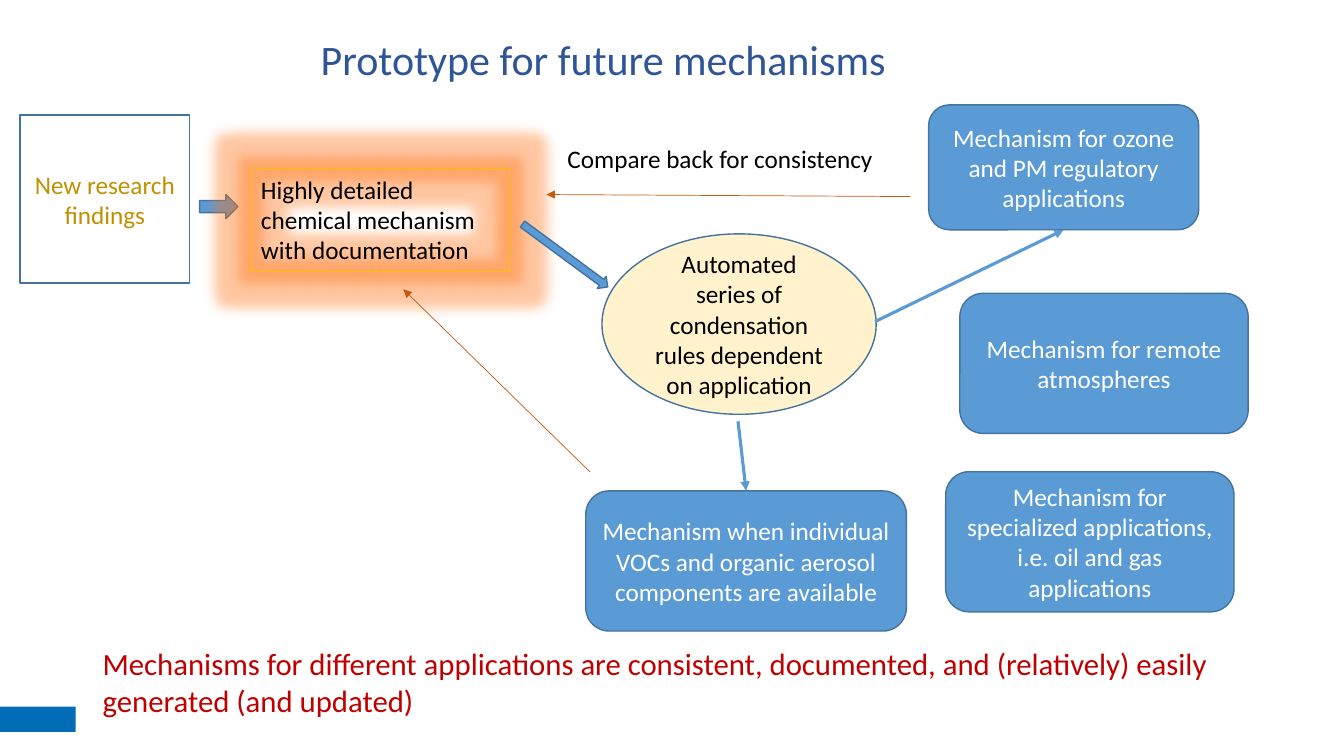
from dataclasses import dataclass

from lxml import etree
from pptx import Presentation
from pptx import util as u
from pptx.dml.color import RGBColor
from pptx.enum import shapes, text
from pptx.oxml import ns

PX = u.Inches(1) // 100


@dataclass(frozen=True)
class Theme:
    """Colours, font and type sizes of the slide."""
    font: str = "Calibri"
    title_size: int = 30
    body_size: int = 18
    summary_size: int = 22
    title: str = "2F5597"
    text: str = "000000"
    blue: str = "5B9BD5"
    outline: str = "43739E"
    white: str = "FFFFFF"
    cream: str = "FFF2CC"
    gold: str = "FFC000"
    dark_gold: str = "BF9000"
    glow: str = "FF7518"
    feedback: str = "C55A11"
    summary: str = "C00000"
    bar: str = "026CB6"


THEME = Theme()
SHAPE = shapes.MSO_SHAPE
CENTER = text.PP_ALIGN.CENTER
LEFT = text.PP_ALIGN.LEFT
MIDDLE = text.MSO_ANCHOR.MIDDLE
TOP = text.MSO_ANCHOR.TOP


def place(box, left, top, width, height):
    """Turn a rectangle relative to a region's box into EMU."""
    return [u.Emu(value * PX) for value in (box[0] + left, box[1] + top, width, height)]


def write(shape, words, color, size=THEME.body_size, align=CENTER, anchor=MIDDLE, wrap=True):
    """Write one run of text into a shape."""
    frame = shape.text_frame
    frame.word_wrap = wrap
    frame.vertical_anchor = anchor
    paragraph = frame.paragraphs[0]
    paragraph.alignment = align
    run = paragraph.add_run()
    run.text = words
    run.font.name = THEME.font
    run.font.size = u.Pt(size)
    run.font.color.rgb = RGBColor.from_string(color)


def add_block(slide, kind, rectangle, fill=THEME.blue, line=THEME.outline, line_width=1):
    """Add a preset shape with a flat fill and outline."""
    shape = slide.shapes.add_shape(kind, *rectangle)
    shape.shadow.inherit = False
    if fill:
        shape.fill.solid()
        shape.fill.fore_color.rgb = RGBColor.from_string(fill)
    else:
        shape.fill.background()
    if line:
        shape.line.color.rgb = RGBColor.from_string(line)
        shape.line.width = u.Pt(line_width)
    else:
        shape.line.fill.background()
    return shape


def add_glow(shape, color, radius, alpha):
    """Surround a shape with a translucent glow."""
    effects = shape._element.spPr.find(ns.qn("a:effectLst"))
    glow = etree.SubElement(effects, ns.qn("a:glow"), rad=str(u.Pt(radius)))
    tint = etree.SubElement(glow, ns.qn("a:srgbClr"), val=color)
    etree.SubElement(tint, ns.qn("a:alpha"), val=str(alpha * 1000))


def add_arrow(slide, box, start, end, color, width):
    """Add a straight line with an arrowhead at its end."""
    points = [u.Emu((box[i % 2] + value) * PX) for i, value in enumerate(start + end)]
    arrow = slide.shapes.add_connector(shapes.MSO_CONNECTOR.STRAIGHT, *points)
    arrow.line.color.rgb = RGBColor.from_string(color)
    arrow.line.width = u.Pt(width)
    etree.SubElement(arrow.line._get_or_add_ln(), ns.qn("a:tailEnd"), type="triangle")
    etree.SubElement(arrow._element.spPr, ns.qn("a:effectLst"))
    return arrow


def add_title(slide, box):
    """Place and fill the title placeholder."""
    title = slide.shapes.title
    title.left, title.top, title.width, title.height = place(box, 0, 0, *box[2:])
    write(title, "Prototype for future mechanisms", THEME.title, THEME.title_size, LEFT)
    title.text_frame.paragraphs[0].line_spacing = 0.9


def add_sources(slide, box):
    """Draw the research findings feeding the detailed mechanism."""
    findings = add_block(slide, SHAPE.RECTANGLE, place(box, 0, 0, 168, 167), None)
    write(findings, "New research findings", THEME.dark_gold)
    add_block(slide, SHAPE.RIGHT_ARROW, place(box, 178, 79, 38, 24))
    detailed = add_block(slide, SHAPE.RECTANGLE, place(box, 229, 54, 256, 101),
                         None, THEME.gold, 0.75)
    add_glow(detailed, THEME.glow, 18, 40)
    write(detailed, "Highly detailed chemical mechanism with documentation",
          THEME.text, align=LEFT, anchor=TOP)


def add_condensation(slide, box):
    """Draw the condensation rules and the block arrow leading to them."""
    rules = add_block(slide, SHAPE.OVAL, place(box, 89, 0, 272, 179), THEME.cream)
    write(rules, "Automated series of condensation rules dependent on application", THEME.text)
    arrow = add_block(slide, SHAPE.RIGHT_ARROW, place(box, 0, 14, 105, 15))
    arrow.rotation = 36.4


def add_applications(slide, box):
    """Draw the application mechanisms with their incoming arrows."""
    applications = [
        ("Mechanism for ozone and PM regulatory applications", 340, 0, 268, 124),
        ("Mechanism for remote atmospheres", 371, 187, 286, 139),
        ("Mechanism for specialized applications, i.e. oil and gas applications",
         357, 364, 286, 139),
        ("Mechanism when individual VOCs and organic aerosol components are available",
         0, 383, 318, 139),
    ]
    blocks = []
    for words, *rectangle in applications:
        block = add_block(slide, SHAPE.ROUNDED_RECTANGLE, place(box, *rectangle))
        write(block, words, THEME.white)
        blocks.append(block)
    to_ozone = add_arrow(slide, box, (287, 215), (474, 124), THEME.blue, 2.25)
    to_ozone.end_connect(blocks[0], 2)
    to_individual = add_arrow(slide, box, (151, 314), (159, 383), THEME.blue, 2.25)
    to_individual.end_connect(blocks[3], 0)


def add_feedback(slide, box):
    """Draw the thin arrows back to the detailed mechanism and their label."""
    label = slide.shapes.add_textbox(*place(box, 153, 0, 332, 40))
    write(label, "Compare back for consistency", THEME.text, align=LEFT, anchor=TOP, wrap=False)
    for start, end in [((503, 58), (142, 56)), ((185, 331), (0, 150))]:
        add_arrow(slide, box, start, end, THEME.feedback, 0.5)


def add_summary(slide, box):
    """Write the closing statement."""
    summary = slide.shapes.add_textbox(*place(box, 0, 0, *box[2:]))
    write(summary, "Mechanisms for different applications are consistent, documented, and "
          "(relatively) easily generated (and updated)",
          THEME.summary, THEME.summary_size, LEFT, TOP)


def main():
    """Build and save the presentation."""
    presentation = Presentation()
    presentation.slide_width = u.Emu(1333 * PX)
    presentation.slide_height = u.Emu(750 * PX)
    slide = presentation.slides.add_slide(presentation.slide_layouts[5])
    add_block(slide, SHAPE.RECTANGLE, place((0, 701), 0, 0, 75, 25), THEME.bar, None)
    add_title(slide, (308, 6, 595, 111))
    add_sources(slide, (20, 114, 485, 167))
    add_condensation(slide, (508, 232, 361, 179))
    add_applications(slide, (581, 104, 657, 522))
    add_feedback(slide, (400, 137, 503, 331))
    add_summary(slide, (92, 635, 1146, 84))
    presentation.save("out.pptx")


if __name__ == "__main__":
    main()
